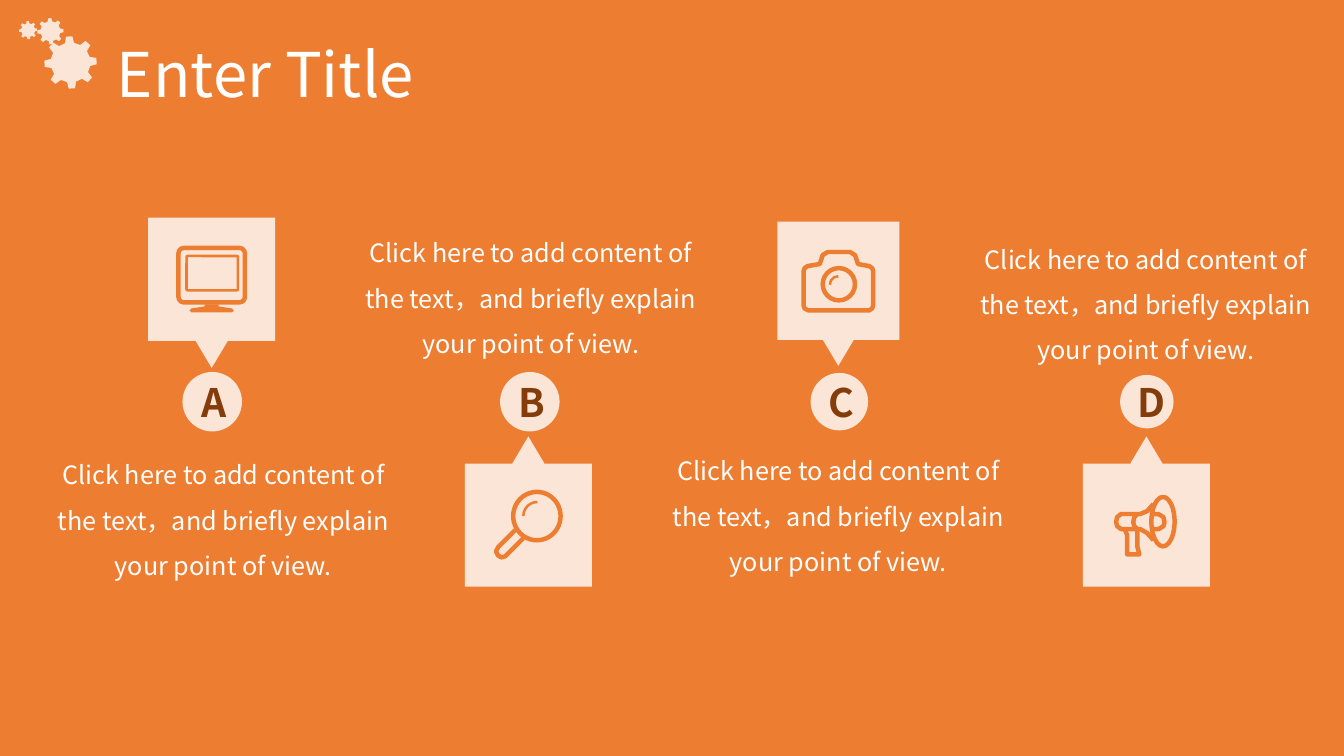
from dataclasses import dataclass
from math import cos, radians, sin

from lxml.etree import SubElement
from pptx import Presentation
from pptx.dml.color import RGBColor
from pptx.enum.shapes import MSO_SHAPE as Preset
from pptx.enum.text import MSO_ANCHOR as Anchor, PP_ALIGN as Align
from pptx.oxml.ns import qn
from pptx.shapes.autoshape import Shape
from pptx.slide import Slide
from pptx.util import Inches, Pt

Point = tuple[float, float]


@dataclass(frozen=True)
class Theme:
    orange: RGBColor = RGBColor(0xED, 0x7D, 0x31)
    peach: RGBColor = RGBColor(0xFB, 0xE5, 0xD6)
    brown: RGBColor = RGBColor(0x84, 0x3C, 0x0B)
    white: RGBColor = RGBColor(0xFF, 0xFF, 0xFF)
    font: str = "Noto Sans CJK JP"
    title_size: float = 44
    letter_size: float = 28
    body_size: float = 18
    thick: float = 3.2
    thin: float = 1.8


THEME = Theme()
BODY = "Click here to add content of the text，and briefly explain your point of view."


@dataclass(frozen=True)
class Box:
    left: float
    top: float
    width: float
    height: float

    def emu(self) -> list[int]:
        return [Inches(v) for v in (self.left, self.top, self.width, self.height)]


@dataclass(frozen=True)
class Preform:
    """Preset shape stroked as part of an icon."""
    kind: Preset
    box: Box
    weight: float = THEME.thick
    adjustments: tuple[float, ...] = ()


@dataclass(frozen=True)
class Outline:
    """Straight-edged part of an icon, stroked or solid."""
    points: tuple[Point, ...]
    closed: bool = False
    solid: bool = False


@dataclass(frozen=True)
class Column:
    letter: str
    circle: Box
    callout: Box
    points_up: bool
    text_at: Point
    icon: tuple[Preform | Outline, ...]


@dataclass(frozen=True)
class Gear:
    x: float
    y: float
    radius: float


GLARE = (108, 162)  # quarter arc, from left to top

MONITOR = (
    Preform(Preset.ROUNDED_RECTANGLE, Box(1.77, 2.46, 0.66, 0.54), adjustments=(0.1,)),
    Preform(Preset.ROUNDED_RECTANGLE, Box(1.85, 2.54, 0.51, 0.34), THEME.thin, (0.03,)),
    Outline(((2.03, 3.02), (2.17, 3.02), (2.17, 3.04), (2.3, 3.06), (2.32, 3.08), (2.3, 3.1),
             (1.9, 3.1), (1.88, 3.08), (1.9, 3.06), (2.03, 3.04)), closed=True, solid=True),
)
MAGNIFIER = (
    Preform(Preset.OVAL, Box(5.09, 4.88, 0.47, 0.48)),
    Preform(Preset.ARC, Box(5.19, 4.98, 0.28, 0.28), THEME.thin, GLARE),
    Outline(((5.11, 5.26), (4.94, 5.43), (4.92, 5.47), (4.94, 5.51), (4.97, 5.53),
             (5.01, 5.52), (5.19, 5.34))),
)
CAMERA = (
    Outline(((7.97, 2.69), (7.98, 2.66), (8.01, 2.64), (8.13, 2.62), (8.16, 2.53), (8.21, 2.5),
             (8.43, 2.5), (8.48, 2.53), (8.51, 2.62), (8.62, 2.64), (8.65, 2.66), (8.66, 2.69),
             (8.66, 3.03), (8.65, 3.06), (8.62, 3.08), (8.02, 3.08), (7.98, 3.06), (7.97, 3.03)),
            closed=True),
    Preform(Preset.OVAL, Box(8.16, 2.66, 0.32, 0.32)),
    Preform(Preset.ARC, Box(8.23, 2.74, 0.17, 0.17), THEME.thin, GLARE),
)
MEGAPHONE = (
    Preform(Preset.OVAL, Box(11.42, 4.93, 0.23, 0.49)),
    # Horn, ring, hub and handle
    Outline(((11.44, 5), (11.38, 5.07), (11.31, 5.1), (11.12, 5.1), (11.08, 5.13), (11.07, 5.18),
             (11.08, 5.22), (11.12, 5.25), (11.31, 5.25), (11.38, 5.29), (11.44, 5.36))),
    Outline(((11.28, 5.1), (11.25, 5.13), (11.24, 5.18), (11.25, 5.22), (11.28, 5.25))),
    Outline(((11.42, 5.1), (11.49, 5.1), (11.54, 5.13), (11.55, 5.18), (11.54, 5.22),
             (11.49, 5.25), (11.42, 5.25))),
    Outline(((11.16, 5.26), (11.18, 5.31), (11.18, 5.5), (11.3, 5.5), (11.28, 5.42),
             (11.28, 5.26))),
)

COLUMNS = (
    Column("A", Box(1.81, 3.69, 0.59, 0.59), Box(1.47, 2.16, 1.26, 1.49), False, (0.38, 4.36), MONITOR),
    Column("B", Box(4.96, 3.69, 0.59, 0.59), Box(4.61, 4.33, 1.26, 1.49), True, (3.43, 2.16), MAGNIFIER),
    Column("C", Box(8.04, 3.7, 0.57, 0.57), Box(7.71, 2.2, 1.21, 1.43), False, (6.48, 4.32), CAMERA),
    Column("D", Box(11.11, 3.72, 0.53, 0.53), Box(10.74, 4.33, 1.26, 1.49), True, (9.53, 2.22), MEGAPHONE),
)
GEARS = (Gear(0.5, 0.31, 0.13), Gear(0.28, 0.3, 0.09), Gear(0.7, 0.62, 0.26))


def paint(shape: Shape, color: RGBColor) -> None:
    shape.shadow.inherit = False
    shape.fill.solid()
    shape.fill.fore_color.rgb = color
    shape.line.fill.background()


def stroke(shape: Shape, weight: float) -> None:
    shape.shadow.inherit = False
    shape.fill.background()
    shape.line.color.rgb = THEME.orange
    shape.line.width = Pt(weight)


def write(shape: Shape, text: str, size: float, color: RGBColor, align: Align,
          spacing: float = 1.0, bold: bool = False) -> None:
    para = shape.text_frame.paragraphs[0]
    para.text, para.alignment, para.line_spacing = text, align, spacing
    font = para.font
    font.name, font.size, font.bold = THEME.font, Pt(size), bold
    font.color.rgb = color
    # The East Asian face serves the full-width comma
    SubElement(para._p.pPr.find(qn("a:defRPr")), qn("a:ea"), typeface=THEME.font)


def draw_polygon(page: Slide, points: tuple[Point, ...], closed: bool) -> Shape:
    corners = [(Inches(x), Inches(y)) for x, y in points]
    builder = page.shapes.build_freeform(*corners[0])
    builder.add_line_segments(corners[1:], close=closed)
    return builder.convert_to_shape()


def draw_gear(page: Slide, gear: Gear) -> None:
    profile = ((-13, 0.76), (-7, 1), (7, 1), (13, 0.76))
    points = tuple(
        (gear.x + gear.radius * reach * cos(radians(tooth * 45 + turn - 3)),
         gear.y + gear.radius * reach * sin(radians(tooth * 45 + turn - 3)))
        for tooth in range(8) for turn, reach in profile)
    paint(draw_polygon(page, points, closed=True), THEME.peach)


def draw_preset(page: Slide, kind: Preset, box: Box, adjustments: tuple[float, ...] = ()) -> Shape:
    shape = page.shapes.add_shape(kind, *box.emu())
    for index, value in enumerate(adjustments):
        shape.adjustments[index] = value
    return shape


def draw_icon_part(page: Slide, part: Preform | Outline) -> None:
    if isinstance(part, Preform):
        stroke(draw_preset(page, part.kind, part.box, part.adjustments), part.weight)
        return
    shape = draw_polygon(page, part.points, part.closed)
    if part.solid:
        paint(shape, THEME.orange)
    else:
        stroke(shape, THEME.thick)


def draw_column(page: Slide, column: Column) -> None:
    circle = draw_preset(page, Preset.OVAL, column.circle)
    paint(circle, THEME.peach)
    write(circle, column.letter, THEME.letter_size, THEME.brown, Align.CENTER, bold=True)
    callout = draw_preset(page, Preset.DOWN_ARROW_CALLOUT, column.callout, (0.36, 0.125, 0.21, 0.82))
    callout.rotation = 180 if column.points_up else 0
    paint(callout, THEME.peach)
    for part in column.icon:
        draw_icon_part(page, part)
    body = page.shapes.add_textbox(*Box(*column.text_at, 3.67, 1.46).emu())
    body.text_frame.word_wrap = True
    write(body, BODY, THEME.body_size, THEME.white, Align.CENTER, spacing=1.5)


def main() -> None:
    deck = Presentation()
    deck.slide_width, deck.slide_height = Inches(13.33), Inches(7.5)
    page = deck.slides.add_slide(deck.slide_layouts[5])
    page.background.fill.solid()
    page.background.fill.fore_color.rgb = THEME.orange

    # Title and gears
    title = page.shapes.title
    title.left, title.top, title.width, title.height = Box(1.06, 0.18, 11.5, 1.17).emu()
    title.text_frame.vertical_anchor = Anchor.MIDDLE
    write(title, "Enter Title", THEME.title_size, THEME.white, Align.LEFT, spacing=0.9)
    for gear in GEARS:
        draw_gear(page, gear)

    # Lettered columns
    for column in COLUMNS:
        draw_column(page, column)
    deck.save("out.pptx")


if __name__ == "__main__":
    main()
